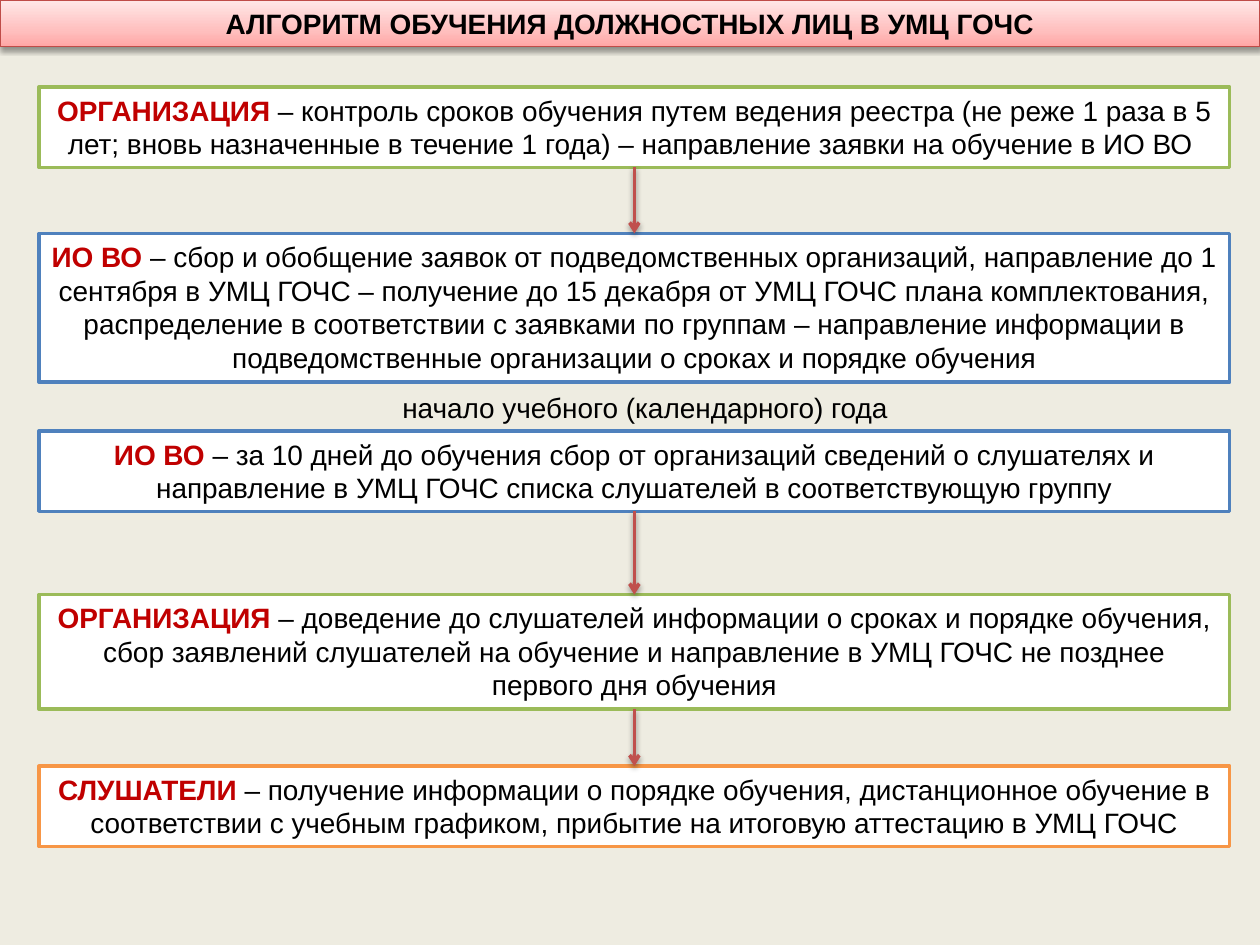
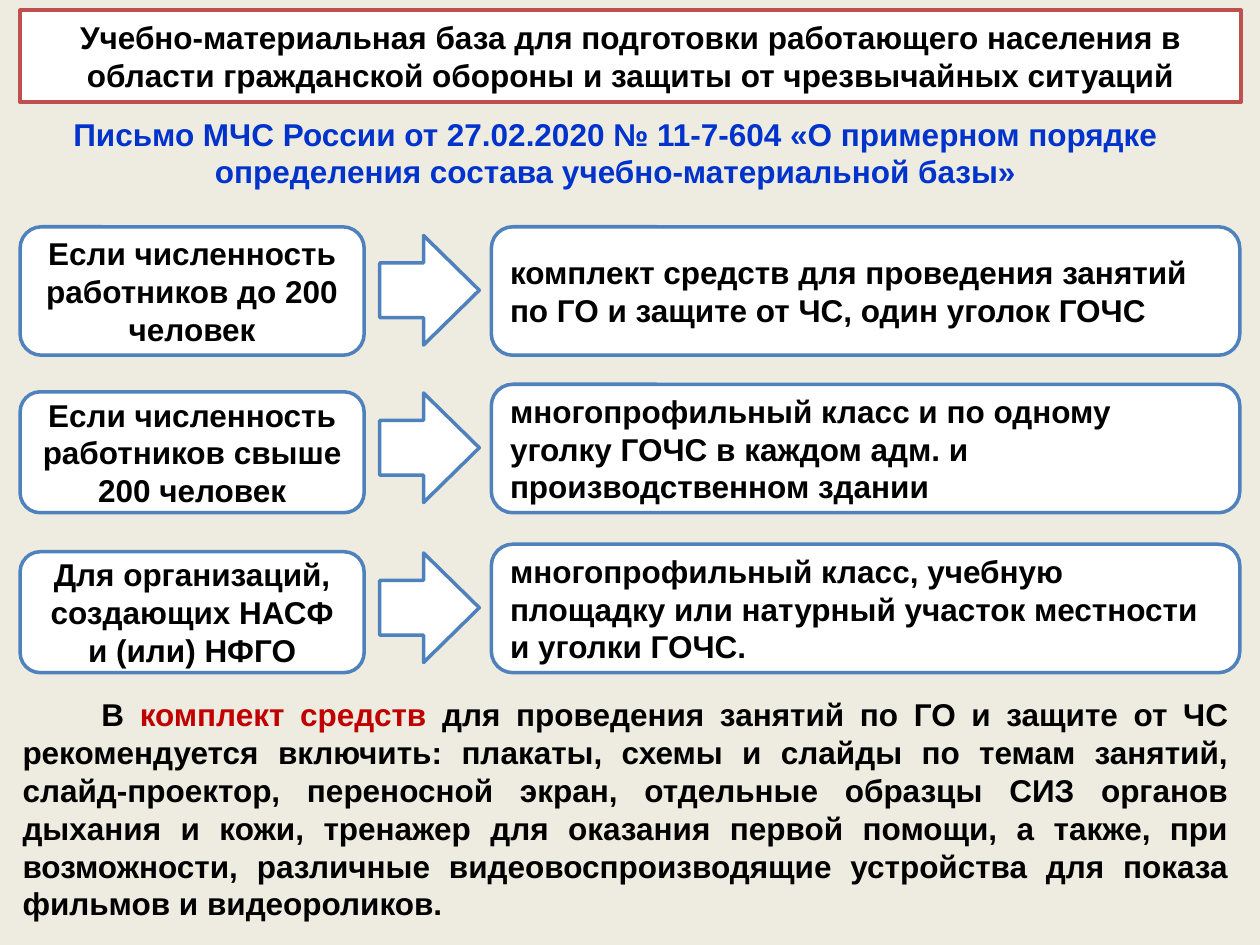
import pptx
import pptx.util
import pptx.dml.color
import pptx.enum.shapes
import pptx.enum.text
import pptx.oxml
from lxml import etree

Pt = pptx.util.Pt
SHAPE = pptx.enum.shapes.MSO_SHAPE
ALIGN = pptx.enum.text.PP_ALIGN
ANCHOR = pptx.enum.text.MSO_ANCHOR


class Theme:
    font = "Arial"
    small, large = 16, 18
    line = 2
    back, white, black = "EEECE1", "FFFFFF", "000000"
    red, blue = "C00000", "0033CC"
    green, steel, orange, brick = "9BBB59", "4F81BD", "F79646", "C0504D"
    rim = "BF4C48"
    band = ((0, "FFA6A5"), (35, "FFC0BF"), (100, "FFE7E7"))


# Slide 1: role, text, border, top, number of text lines
FLOW_TITLE = "АЛГОРИТМ ОБУЧЕНИЯ ДОЛЖНОСТНЫХ ЛИЦ В УМЦ ГОЧС"
STEPS = [
    ("ОРГАНИЗАЦИЯ", " – контроль сроков обучения путем ведения реестра (не реже "
     "1 раза в 5 лет; вновь назначенные в течение 1 года) – направление заявки "
     "на обучение в ИО ВО ", Theme.green, 49.7, 2),
    ("ИО ВО ", "– сбор и обобщение заявок от подведомственных организаций, "
     "направление до 1 сентября в УМЦ ГОЧС – получение до 15 декабря от УМЦ ГОЧС "
     "плана комплектования, распределение в соответствии с заявками по группам – "
     "направление информации в подведомственные организации о сроках и порядке "
     "обучения", Theme.steel, 133.4, 4),
    ("ИО ВО ", "– за 10 дней до обучения сбор от организаций сведений о слушателях "
     "и направление в УМЦ ГОЧС списка слушателей в соответствующую группу",
     Theme.steel, 246.2, 2),
    ("ОРГАНИЗАЦИЯ", " – доведение до слушателей информации о сроках и порядке "
     "обучения, сбор заявлений слушателей на обучение и направление в УМЦ ГОЧС "
     "не позднее первого дня обучения", Theme.green, 339.8, 3),
    ("СЛУШАТЕЛИ", " – получение информации о порядке обучения, дистанционное "
     "обучение в соответствии с учебным графиком, прибытие на итоговую аттестацию "
     "в УМЦ ГОЧС", Theme.orange, 437.8, 2),
]
LINKS = [(0, 1), (2, 3), (3, 4)]
YEAR = "начало учебного (календарного) года"

# Slide 2: condition, equipment, top of the row, top of the condition in the row
BASE_TITLE = ("Учебно-материальная база для подготовки работающего населения в "
              "области гражданской обороны и защиты от чрезвычайных ситуаций")
LETTER = ("Письмо МЧС России от 27.02.2020 № 11-7-604 «О примерном порядке "
          "определения состава учебно-материальной базы»")
CASES = [
    ("Если численность работников до 200 человек",
     "комплект средств для проведения занятий по ГО и защите от ЧС, "
     "один уголок ГОЧС", 129.6, 0),
    ("Если численность работников свыше 200 человек",
     "многопрофильный класс и по одному уголку ГОЧС в каждом адм. и "
     "производственном здании", 219.6, 4.3),
    ("Для организаций, создающих НАСФ и (или) НФГО",
     "многопрофильный класс, учебную площадку или натурный участок местности "
     "и уголки ГОЧС.", 311, 4.3),
]
KIT = [
    ("В ", Theme.black),
    ("комплект средств ", Theme.red),
    ("для проведения занятий по ГО и защите от ЧС рекомендуется включить: плакаты, "
     "схемы и слайды по темам занятий, слайд-проектор, переносной экран, отдельные "
     "образцы СИЗ органов дыхания и кожи, тренажер для оказания первой помощи, "
     "а также, при возможности, различные видеовоспроизводящие устройства для показа "
     "фильмов и видеороликов.", Theme.black),
]


def rgb(code):
    return pptx.dml.color.RGBColor.from_string(code)


def add_xml(shape, body):
    """Append DrawingML to the shape's properties."""
    space = "http://schemas.openxmlformats.org/drawingml/2006/main"
    root = pptx.oxml.parse_xml(f'<a:root xmlns:a="{space}">{body}</a:root>')
    for node in list(root):
        shape._element.spPr.append(node)


def shade(shape):
    add_xml(shape, '<a:effectLst><a:outerShdw blurRad="40000" dist="20000" '
            'dir="5400000" rotWithShape="0"><a:srgbClr val="000000">'
            '<a:alpha val="38000"/></a:srgbClr></a:outerShdw></a:effectLst>')


def write(shape, runs, size, align=ALIGN.CENTER, anchor=ANCHOR.MIDDLE):
    """Fill a shape with one paragraph of (text, colour, bold) runs."""
    frame = shape.text_frame
    frame.word_wrap = True
    frame.auto_size = pptx.enum.text.MSO_AUTO_SIZE.NONE
    frame.vertical_anchor = anchor
    para = frame.paragraphs[0]
    para.alignment = align
    for text, color, bold in runs:
        run = para.add_run()
        run.text = text
        font = run.font
        font.name, font.size, font.bold = Theme.font, Pt(size), bold
        font.color.rgb = rgb(color)
    return para


def edge(shape, color, width=Theme.line):
    shape.line.color.rgb = rgb(color)
    shape.line.width = Pt(width)


def paint(shape, color):
    shape.fill.solid()
    shape.fill.fore_color.rgb = rgb(Theme.white)
    edge(shape, color)


def add_box(slide, kind, area, color):
    box = slide.shapes.add_shape(kind, *map(Pt, area))
    box.shadow.inherit = False
    paint(box, color)
    return box


def add_note(slide, area, runs, size, align=ALIGN.CENTER):
    note = slide.shapes.add_textbox(*map(Pt, area))
    return write(note, runs, size, align, ANCHOR.TOP)


def add_slide(deck, title, area, size, form):
    """Add a slide; return it with its title, shaped as the preset form."""
    slide = deck.slides.add_slide(deck.slide_layouts[5])
    head = slide.shapes.title
    head.left, head.top, head.width, head.height = map(Pt, area)
    add_xml(head, f'<a:prstGeom prst="{form}"><a:avLst/></a:prstGeom>')
    write(head, [(title, Theme.black, True)], size)
    return slide, head


def add_flow(deck):
    slide, head = add_slide(deck, FLOW_TITLE, (0, 0, 720, 26.6), Theme.small, "rect")
    stops = "".join(f'<a:gs pos="{pos * 1000}"><a:srgbClr val="{color}"/></a:gs>'
                    for pos, color in Theme.band)
    add_xml(head, f'<a:gradFill><a:gsLst>{stops}</a:gsLst>'
            '<a:lin ang="16200000" scaled="1"/></a:gradFill>')
    edge(head, Theme.rim, 0.75)
    shade(head)

    boxes = []
    for role, text, color, top, lines in STEPS:
        area = (22.3, top, 680.4, 7 + 19.5 * lines)
        box = add_box(slide, SHAPE.RECTANGLE, area, color)
        write(box, [(role, Theme.red, True), (text, Theme.black, False)],
              Theme.small, anchor=ANCHOR.TOP)
        boxes.append(box)

    add_note(slide, (61.9, 219.6, 613.4, 26.6),
             [(YEAR, Theme.black, False)], Theme.small)

    for start, end in LINKS:
        link = slide.shapes.add_connector(
            pptx.enum.shapes.MSO_CONNECTOR.STRAIGHT, 0, 0, 0, 0)
        link.begin_connect(boxes[start], 2)
        link.end_connect(boxes[end], 0)
        edge(link, Theme.brick)
        tail = pptx.oxml.ns.qn("a:tailEnd")
        etree.SubElement(link.line._get_or_add_ln(), tail, type="arrow")
        shade(link)


def add_base(deck):
    slide, head = add_slide(deck, BASE_TITLE, (11.5, 5.8, 697.7, 52.6),
                            Theme.large, "roundRect")
    paint(head, Theme.brick)
    add_note(slide, (11.5, 61.9, 680.4, 51.1),
             [(LETTER, Theme.blue, True)], Theme.large)

    high = 73.4
    for case, kit, top, drop in CASES:
        cells = [(case, (11.5, top + drop, 196.6, high - drop), ALIGN.CENTER),
                 (kit, (280.8, top, 427.7, high), ALIGN.LEFT)]
        for text, area, align in cells:
            box = add_box(slide, SHAPE.ROUNDED_RECTANGLE, area, Theme.steel)
            write(box, [(text, Theme.black, True)], Theme.large, align)
        arrow = add_box(slide, SHAPE.RIGHT_ARROW, (217, top + 5, 56.9, 62.6),
                        Theme.steel)
        arrow.adjustments[0], arrow.adjustments[1] = 0.5, 0.56

    para = add_note(slide, (5.8, 393.8, 703.4, 138.2),
                    [(text, color, True) for text, color in KIT],
                    Theme.large, ALIGN.JUSTIFY)
    para._p.get_or_add_pPr().set("indent", str(Pt(45)))


def main():
    deck = pptx.Presentation()
    deck.slide_width, deck.slide_height = Pt(720), Pt(540)
    back = deck.slide_master.background.fill
    back.solid()
    back.fore_color.rgb = rgb(Theme.back)
    add_flow(deck)
    add_base(deck)
    deck.save("out.pptx")


if __name__ == "__main__":
    main()
